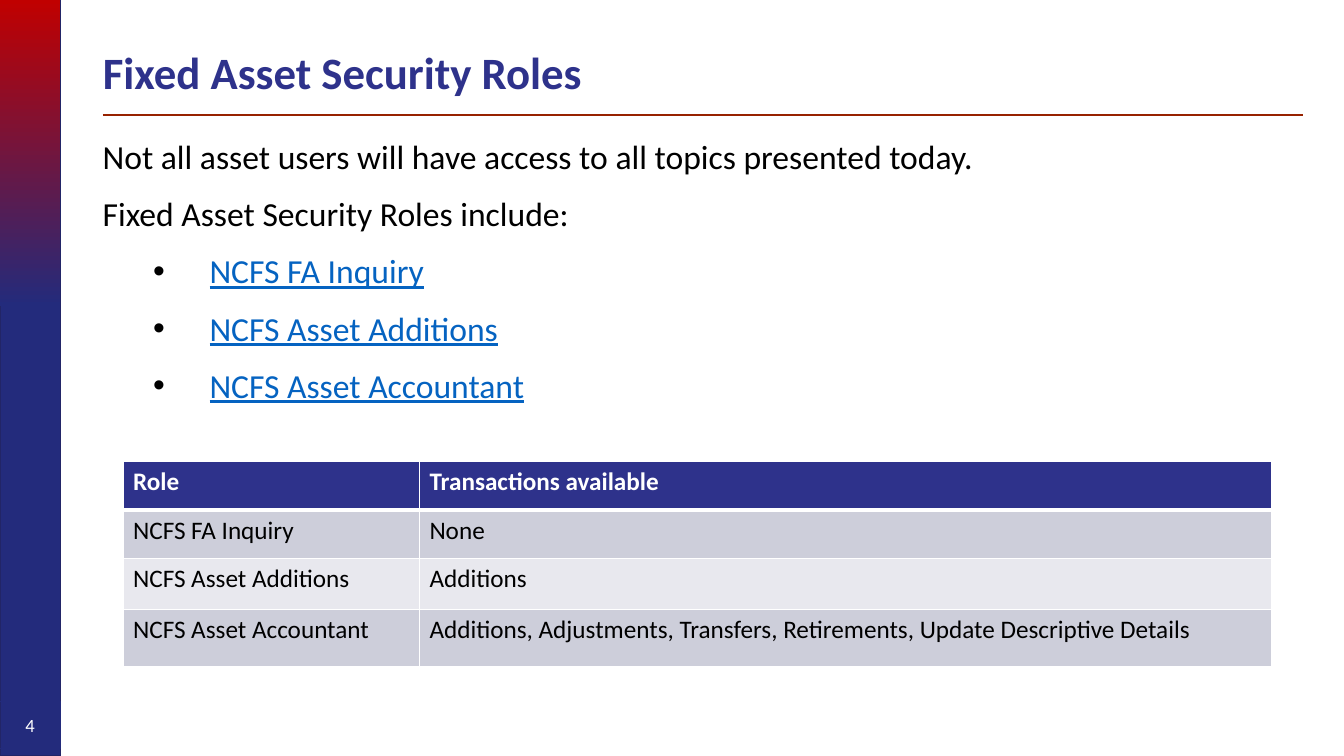
from dataclasses import dataclass

from lxml.etree import SubElement
from pptx import Presentation
from pptx.dml.color import RGBColor
from pptx.enum.shapes import MSO_CONNECTOR, MSO_SHAPE
from pptx.enum.text import MSO_ANCHOR, PP_ALIGN
from pptx.oxml.ns import qn
from pptx.util import Inches, Pt


@dataclass(frozen=True)
class Theme:
    font: str = "Calibri"
    title: str = "2E328B"
    panel: str = "232B7C"
    panel_line: str = "222567"
    panel_top: str = "C00000"
    rule: str = "972200"
    text: str = "000000"
    link: str = "0563C1"
    white: str = "FFFFFF"
    band_dark: str = "CDCEDA"
    band_light: str = "E8E8EE"
    title_size: float = 32
    body_size: float = 24
    table_size: float = 18
    number_size: float = 13.3


THEME = Theme()
PANEL_WIDTH = 0.6
STATEMENTS = [
    "Not all asset users will have access to all topics presented today.",
    "Fixed Asset Security Roles include:",
]
ROLES = [
    ("NCFS FA Inquiry", "None"),
    ("NCFS Asset Additions", "Additions"),
    ("NCFS Asset Accountant",
     "Additions, Adjustments, Transfers, Retirements, Update Descriptive Details"),
]


def rgb(color):
    return RGBColor.from_string(color)


def box(left, top, width, height):
    return [Inches(value) for value in (left, top, width, height)]


def format_runs(paragraph, size, color, bold=False, underline=False):
    for run in paragraph.runs:
        font = run.font
        font.name, font.size = THEME.font, Pt(size)
        font.color.rgb = rgb(color)
        font.bold, font.underline = bold, underline


def add_rectangle(slide, place, line=None, line_width=1):
    rectangle = slide.shapes.add_shape(MSO_SHAPE.RECTANGLE, *box(*place))
    rectangle.shadow.inherit = False
    if line:
        rectangle.line.color.rgb = rgb(line)
        rectangle.line.width = Pt(line_width)
    else:
        rectangle.line.fill.background()
    return rectangle


def add_side_panel(slide):
    panel = add_rectangle(slide, (0, 0, PANEL_WIDTH, 7.5), THEME.panel_line)
    panel.fill.solid()
    panel.fill.fore_color.rgb = rgb(THEME.panel)

    fade = add_rectangle(slide, (0, 0, PANEL_WIDTH, 3.04))
    fade.fill.gradient()
    fade.fill.gradient_angle = 270
    for stop, position, color in zip(fade.fill.gradient_stops, (0, 1),
                                     (THEME.panel_top, THEME.panel)):
        stop.position = position
        stop.color.rgb = rgb(color)


def add_title_rule(slide):
    rule = slide.shapes.add_connector(
        MSO_CONNECTOR.STRAIGHT, *box(1.02, 1.14, 12.92, 1.14))
    rule.line.color.rgb = rgb(THEME.rule)
    rule.line.width = Pt(1.5)
    SubElement(rule._element.spPr, qn("a:effectLst"))


def set_title(slide, text):
    title = slide.shapes.title
    title.left, title.top, title.width, title.height = box(0.92, 0.4, 12, 0.69)
    frame = title.text_frame
    frame.text = text
    frame.vertical_anchor = MSO_ANCHOR.MIDDLE
    paragraph = frame.paragraphs[0]
    paragraph.alignment = PP_ALIGN.LEFT
    paragraph.line_spacing = 0.9
    format_runs(paragraph, THEME.title_size, THEME.title, bold=True)


def add_bullet(paragraph):
    paragraph.level = 1
    properties = paragraph._p.get_or_add_pPr()
    properties.set("marL", str(Inches(1.06)))
    properties.set("indent", str(Inches(-0.56)))
    color = SubElement(properties, qn("a:buClr"))
    SubElement(color, qn("a:srgbClr"), val=THEME.text)
    SubElement(properties, qn("a:buFont"), typeface="Arial")
    SubElement(properties, qn("a:buChar"), char="•")


def add_introduction(slide):
    frame = slide.shapes.add_textbox(*box(0.92, 1.3, 11.8, 2.79)).text_frame
    frame.word_wrap = True
    role_names = [name for name, _ in ROLES]
    for index, text in enumerate(STATEMENTS + role_names):
        paragraph = frame.add_paragraph() if index else frame.paragraphs[0]
        paragraph.text = text
        paragraph.space_before = Pt(6 if index else 0)
        paragraph.space_after = Pt(6)
        is_role = index >= len(STATEMENTS)
        if is_role:
            add_bullet(paragraph)
        format_runs(paragraph, THEME.body_size,
                    THEME.link if is_role else THEME.text, underline=is_role)


def set_borders(cell, top, bottom):
    properties = cell._tc.get_or_add_tcPr()
    for side, width in (("L", 1), ("R", 1), ("T", top), ("B", bottom)):
        border = SubElement(properties, qn(f"a:ln{side}"), w=str(Pt(width)))
        fill = SubElement(border, qn("a:solidFill"))
        SubElement(fill, qn("a:srgbClr"), val=THEME.white)


def add_role_table(slide):
    rows = [("Role", "Transactions available")] + ROLES
    table = slide.shapes.add_table(
        len(rows), 2, *box(1.22, 4.58, 11.39, 2.04)).table
    for column, width in zip(table.columns, (2.94, 8.45)):
        column.width = Inches(width)
    for row, height in zip(table.rows, (0.48, 0.48, 0.51, 0.56)):
        row.height = Inches(height)

    for row_index, texts in enumerate(rows):
        is_header = row_index == 0
        band = THEME.band_dark if row_index % 2 else THEME.band_light
        for column_index, text in enumerate(texts):
            cell = table.cell(row_index, column_index)
            cell.text_frame.text = text
            set_borders(cell, top=3 if row_index == 1 else 1,
                        bottom=3 if is_header else 1)
            cell.fill.solid()
            cell.fill.fore_color.rgb = rgb(THEME.title if is_header else band)
            format_runs(cell.text_frame.paragraphs[0], THEME.table_size,
                        THEME.white if is_header else THEME.text, bold=is_header)


def add_slide_number(slide, number):
    badge = add_rectangle(slide, (0, 6.96, PANEL_WIDTH, 0.47), THEME.panel, 0.75)
    badge.fill.background()
    frame = badge.text_frame
    frame.text = number
    frame.vertical_anchor = MSO_ANCHOR.MIDDLE
    frame.paragraphs[0].alignment = PP_ALIGN.CENTER
    format_runs(frame.paragraphs[0], THEME.number_size, THEME.white)


def main():
    deck = Presentation()
    deck.slide_width, deck.slide_height = Inches(13.33), Inches(7.5)
    slide = deck.slides.add_slide(deck.slide_layouts.get_by_name("Title Only"))
    add_side_panel(slide)
    add_title_rule(slide)
    set_title(slide, "Fixed Asset Security Roles")
    add_introduction(slide)
    add_role_table(slide)
    add_slide_number(slide, "4")
    deck.save("out.pptx")


if __name__ == "__main__":
    main()
